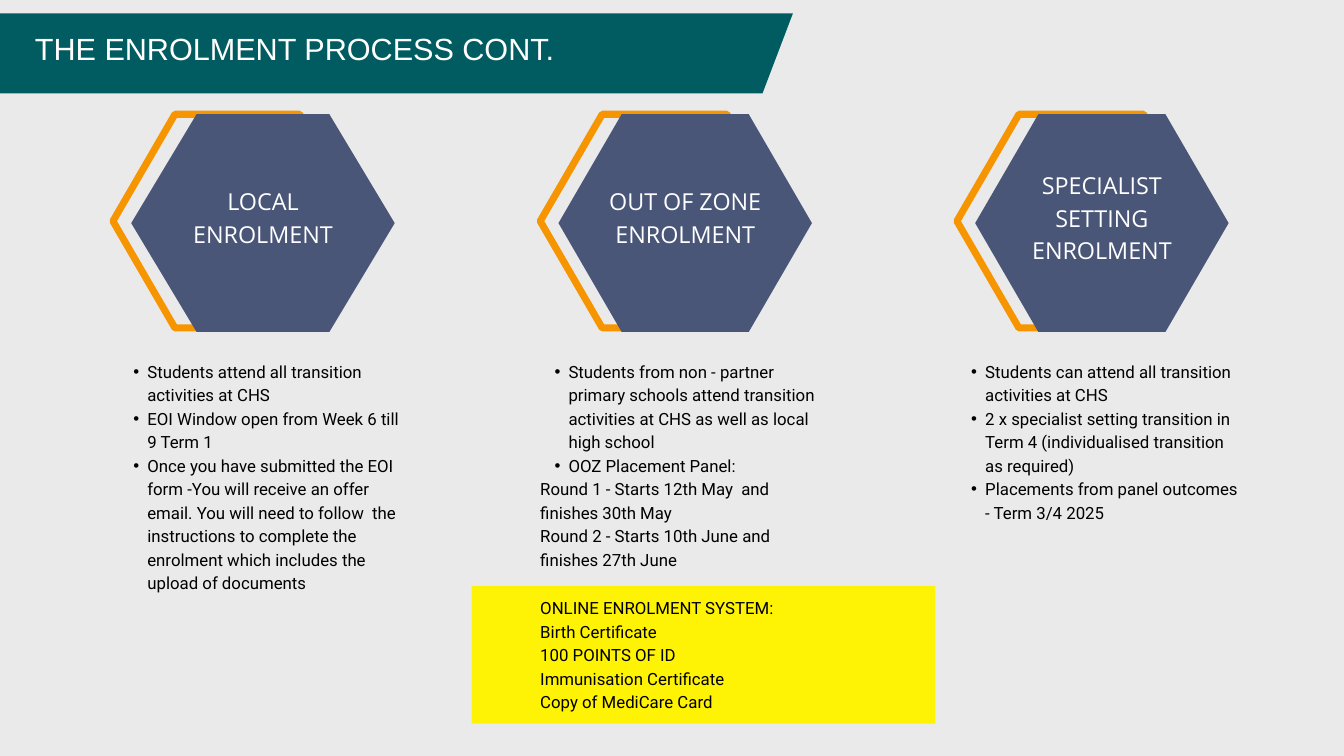
from lxml import etree
from pptx import Presentation
from pptx import util as u
from pptx.dml.color import RGBColor
from pptx.enum import shapes, text
from pptx.oxml.ns import qn

COLOURS = {
    "background": "EAEAEB",
    "banner": "005C60",
    "outline": "F69500",
    "hexagon": "4A5678",
    "highlight": "FFF305",
    "white": "FFFFFF",
    "black": "000000",
}
BULLET = "• "

# Left edge, hexagon width, text indent and text height in cm, label, lines
COLUMNS = [
    (4.27, 9.96, 0.23, 9.55, "LOCAL ENROLMENT", [
        "• Students attend all transition activities at CHS",
        "• EOI Window open from Week 6 till 9 Term 1",
        "• Once you have submitted the EOI form -You will receive an offer email. "
        "You will need to follow  the instructions to complete the enrolment "
        "which includes the upload of documents",
    ]),
    (20.42, 9.58, 0, 9.55, "OUT OF ZONE ENROLMENT", [
        "• Students from non - partner primary schools attend transition "
        "activities at CHS as well as local high school",
        "• OOZ Placement Panel:",
        "Round 1 - Starts 12th May  and finishes 30th May",
        "Round 2 - Starts 10th June and finishes 27th June",
    ]),
    (36.17, 9.58, 0, 6.93, "SPECIALIST SETTING ENROLMENT", [
        "• Students can attend all transition activities at CHS",
        "• 2 x specialist setting transition in Term 4 "
        "(individualised transition as required)",
        "• Placements from panel outcomes - Term 3/4 2025",
    ]),
]
DOCUMENTS = [
    "ONLINE ENROLMENT SYSTEM:",
    "Birth Certificate",
    "100 POINTS OF ID",
    "Immunisation Certificate",
    "Copy of MediCare Card",
]


def colour(name):
    return RGBColor.from_string(COLOURS[name])


def add_block(s, kind, x, y, w, h, fill=None, line=None, slant=None):
    """Add a preset shape; slant is its adjustment, line a 7.5 pt outline."""
    sp = s.shapes.add_shape(kind, u.Cm(x), u.Cm(y), u.Cm(w), u.Cm(h))
    sp.shadow.inherit = False
    if slant is not None:
        sp.adjustments[0] = slant
    if fill:
        sp.fill.solid()
        sp.fill.fore_color.rgb = colour(fill)
    else:
        sp.fill.background()
    if line:
        sp.line.color.rgb = colour(line)
        sp.line.width = u.Pt(7.5)
    else:
        sp.line.fill.background()
    return sp


def set_frame(tf, margin=0, anchor=text.MSO_ANCHOR.TOP):
    tf.word_wrap = True
    tf.auto_size = text.MSO_AUTO_SIZE.NONE
    tf.vertical_anchor = anchor
    tf.margin_left = tf.margin_right = u.Cm(margin)
    tf.margin_top = tf.margin_bottom = u.Cm(margin)


def format_paragraph(p, font, size, spacing, ink, align=text.PP_ALIGN.LEFT):
    p.alignment = align
    p.line_spacing = u.Pt(spacing)
    p.space_before = u.Pt(0)
    for r in p.runs:
        r.font.name = font
        r.font.size = u.Pt(size)
        r.font.color.rgb = colour(ink)


def add_bullet(p):
    p.level = 1
    pPr = p._p.get_or_add_pPr()
    pPr.set("marL", str(u.Cm(1.07)))
    pPr.set("indent", str(-u.Cm(0.53)))
    etree.SubElement(pPr, qn("a:buFont")).set("typeface", "Arial")
    etree.SubElement(pPr, qn("a:buChar")).set("char", BULLET.strip())


def add_lines(s, x, y, w, h, lines):
    """Add body text; lines that start with a bullet become list items."""
    tf = s.shapes.add_textbox(u.Cm(x), u.Cm(y), u.Cm(w), u.Cm(h)).text_frame
    set_frame(tf)
    for i, line in enumerate(lines):
        p = tf.add_paragraph() if i else tf.paragraphs[0]
        p.text = line.removeprefix(BULLET)
        if line.startswith(BULLET):
            add_bullet(p)
        format_paragraph(p, "Roboto", 18, 25.2, "black")


def add_banner(s, x, y, w, h):
    add_block(s, shapes.MSO_SHAPE.PARALLELOGRAM, x, y, w, h, "banner", slant=0.38)
    title = s.shapes.title
    title.left, title.top = u.Cm(x + 3.71), u.Cm(y + 0.38)
    title.width, title.height = u.Cm(23.24), u.Cm(1.78)
    tf = title.text_frame
    tf.text = "THE ENROLMENT PROCESS CONT."
    set_frame(tf)
    format_paragraph(tf.paragraphs[0], "Arial", 32.8, 45.9, "white")
    s.shapes._spTree.append(title._element)  # bring in front of the banner


def add_hexagon(s, x, y, w, label):
    hexagon = shapes.MSO_SHAPE.HEXAGON
    add_block(s, hexagon, x, y, 9.4, 8.08, line="outline", slant=0.29)
    x += 0.69
    add_block(s, hexagon, x, y, w, 8.23, "hexagon", slant=0.3 if w > 9.9 else 0.29)
    label_w = 0.72 * w
    box = s.shapes.add_textbox(
        u.Cm(x + (w - label_w) / 2), u.Cm(y - 0.58), u.Cm(label_w), u.Cm(8.81))
    tf = box.text_frame
    tf.text = label
    set_frame(tf, 0.15, text.MSO_ANCHOR.MIDDLE)
    format_paragraph(tf.paragraphs[0], "Open Sans", 25, 35, "white",
                     text.PP_ALIGN.CENTER)


def add_documents(s, x, y, w, h):
    add_block(s, shapes.MSO_SHAPE.RECTANGLE, x, y, w, h, "highlight")
    add_lines(s, x + 2.59, y + 0.33, 12.9, h - 0.4, DOCUMENTS)


def main():
    prs = Presentation()
    prs.slide_width, prs.slide_height = u.Cm(50.8), u.Cm(28.58)
    s = prs.slides.add_slide(prs.slide_layouts[5])
    s.background.fill.solid()
    s.background.fill.fore_color.rgb = colour("background")

    add_banner(s, -2.39, 0.51, 32.36, 3.02)
    add_documents(s, 17.83, 22.15, 17.53, 5.21)
    for x, hexagon_w, indent, text_h, label, lines in COLUMNS:
        add_hexagon(s, x, 4.32, hexagon_w, label)
        add_lines(s, x + indent, 13.54, 10.92, text_h, lines)
    prs.save("out.pptx")


if __name__ == "__main__":
    main()
